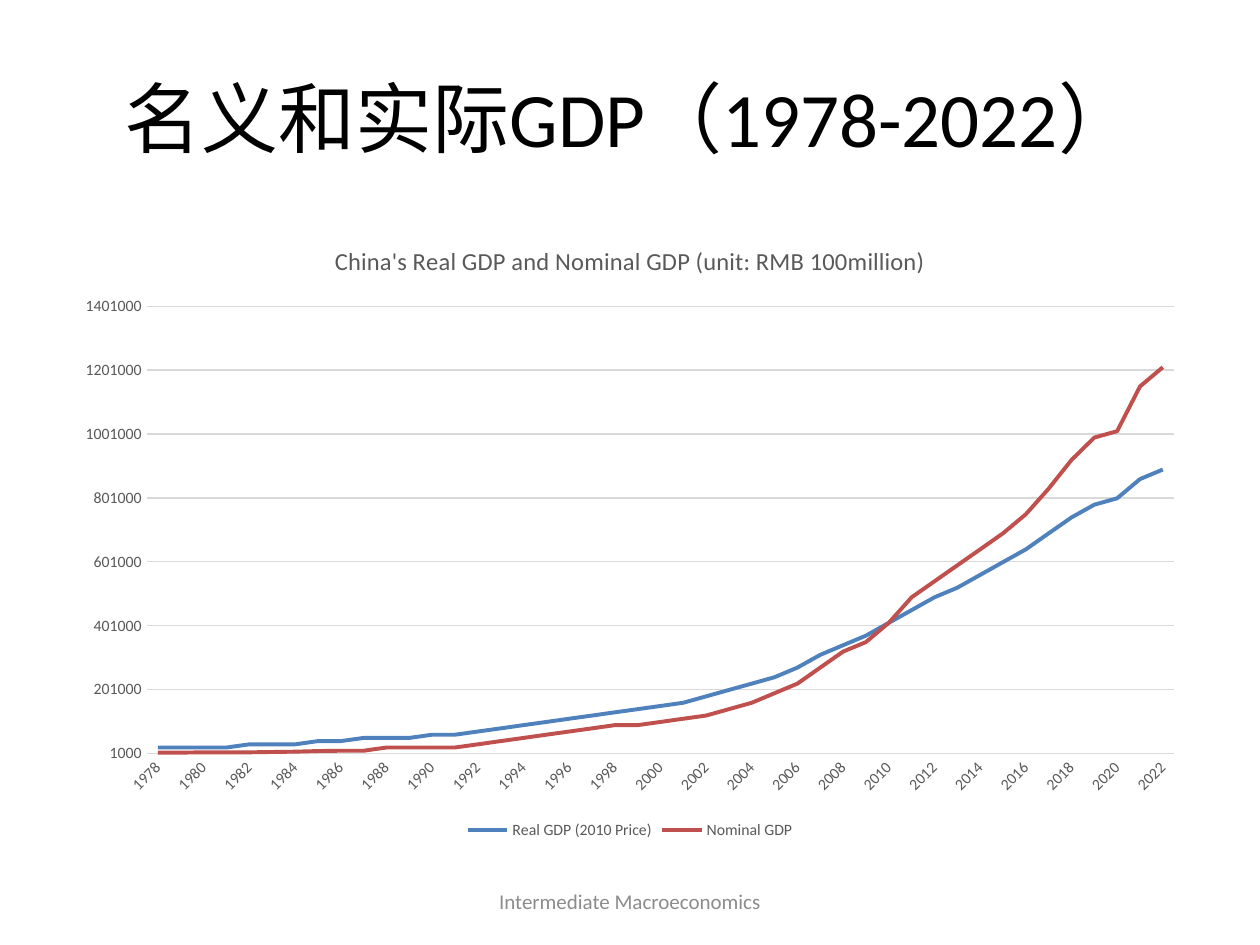
from lxml.etree import Element
from pptx import Presentation
from pptx.chart.data import CategoryChartData
from pptx.dml.color import RGBColor
from pptx.enum.chart import XL_CHART_TYPE as ChartType
from pptx.enum.chart import XL_LEGEND_POSITION as LegendPosition
from pptx.enum.chart import XL_TICK_MARK as TickMark
from pptx.enum.text import MSO_ANCHOR as Anchor
from pptx.enum.text import PP_ALIGN as Align
from pptx.oxml.ns import qn
from pptx.util import Inches, Pt

FONT = "Calibri"
BLACK = RGBColor(0x00, 0x00, 0x00)
FOOTER_GRAY = RGBColor(0x8C, 0x8C, 0x8C)
LABEL_GRAY = RGBColor(0x59, 0x59, 0x59)
GRID_GRAY = RGBColor(0xD9, 0xD9, 0xD9)
BLUE = RGBColor(0x4F, 0x81, 0xBD)
RED = RGBColor(0xC0, 0x50, 0x4D)

WIDTH, HEIGHT = 10, 7.5
MARGIN = WIDTH / 20
CONTENT_WIDTH = WIDTH - 2 * MARGIN
FOOTER_WIDTH = 3.17

TITLE = "名义和实际GDP（1978-2022）"
FOOTER = "Intermediate Macroeconomics"
CHART_TITLE = "China's Real GDP and Nominal GDP (unit: RMB 100million)"
YEARS = range(1978, 2023)
THOUSAND = 1000
SERIES = [
    ("Real GDP (2010 Price)", BLUE, [
        20, 20, 20, 20, 30, 30, 30, 40, 40, 50, 50, 50, 60, 60, 70,
        80, 90, 100, 110, 120, 130, 140, 150, 160, 180, 200, 220, 240, 270, 310,
        340, 370, 410, 450, 490, 520, 560, 600, 640, 690, 740, 780, 800, 860, 890]),
    ("Nominal GDP", RED, [
        4, 4, 5, 5, 5, 6, 7, 9, 10, 10, 20, 20, 20, 20, 30,
        40, 50, 60, 70, 80, 90, 90, 100, 110, 120, 140, 160, 190, 220, 270,
        320, 350, 410, 490, 540, 590, 640, 690, 750, 830, 920, 990, 1010, 1150, 1210]),
]


def style_font(font, size, color):
    font.name = FONT
    font.size = Pt(size)
    font.bold = False
    font.color.rgb = color


def style_line(line, color, width):
    line.color.rgb = color
    line.width = Pt(width)


def add_text(slide, text, left, top, width, height, size, color):
    box = slide.shapes.add_textbox(*map(Inches, (left, top, width, height)))
    frame = box.text_frame
    frame.word_wrap = True
    frame.vertical_anchor = Anchor.MIDDLE
    paragraph = frame.paragraphs[0]
    paragraph.text = text
    paragraph.alignment = Align.CENTER
    style_font(paragraph.font, size, color)


def add_gdp_chart(slide):
    data = CategoryChartData()
    data.categories = [str(year) for year in YEARS]
    for name, _, values in SERIES:
        data.add_series(name, [value * THOUSAND for value in values])
    area = map(Inches, (MARGIN, 1.75, CONTENT_WIDTH, 4.95))
    chart = slide.shapes.add_chart(ChartType.LINE, *area, data).chart
    style_font(chart.font, 10, BLACK)

    chart.has_title = True
    heading = chart.chart_title.text_frame.paragraphs[0]
    heading.text = CHART_TITLE
    style_font(heading.font, 14, LABEL_GRAY)
    chart.chart_title.include_in_layout = False

    chart.has_legend = True
    chart.legend.position = LegendPosition.BOTTOM
    chart.legend.include_in_layout = False
    style_font(chart.legend.font, 9, LABEL_GRAY)

    chart.plots[0].vary_by_categories = False
    for series, (_, color, _) in zip(chart.plots[0].series, SERIES):
        series.smooth = False
        style_line(series.format.line, color, 2.25)

    year_axis, value_axis = chart.category_axis, chart.value_axis
    for axis in (year_axis, value_axis):
        axis.major_tick_mark = axis.minor_tick_mark = TickMark.NONE
        style_font(axis.tick_labels.font, 9, LABEL_GRAY)
    style_line(year_axis.format.line, GRID_GRAY, 0.75)
    value_axis.format.line.fill.background()
    value_axis.minimum_scale = THOUSAND
    value_axis.maximum_scale = 1401 * THOUSAND
    value_axis.major_unit = 200 * THOUSAND
    style_line(value_axis.major_gridlines.format.line, GRID_GRAY, 0.75)

    axis_xml = year_axis._element
    axis_xml.find(qn("c:txPr")).find(qn("a:bodyPr")).set("rot", "-2700000")
    skip = Element(qn("c:tickLblSkip"), val="2")
    axis_xml.find(qn("c:noMultiLvlLbl")).addprevious(skip)


def main():
    presentation = Presentation()
    presentation.slide_width = Inches(WIDTH)
    presentation.slide_height = Inches(HEIGHT)
    slide = presentation.slides.add_slide(presentation.slide_layouts[6])
    add_text(slide, TITLE, MARGIN, 0.3, CONTENT_WIDTH, HEIGHT / 6, 44, BLACK)
    add_text(slide, FOOTER, (WIDTH - FOOTER_WIDTH) / 2, 6.95, FOOTER_WIDTH, 0.4,
             12, FOOTER_GRAY)
    add_gdp_chart(slide)
    presentation.save("out.pptx")


if __name__ == "__main__":
    main()
